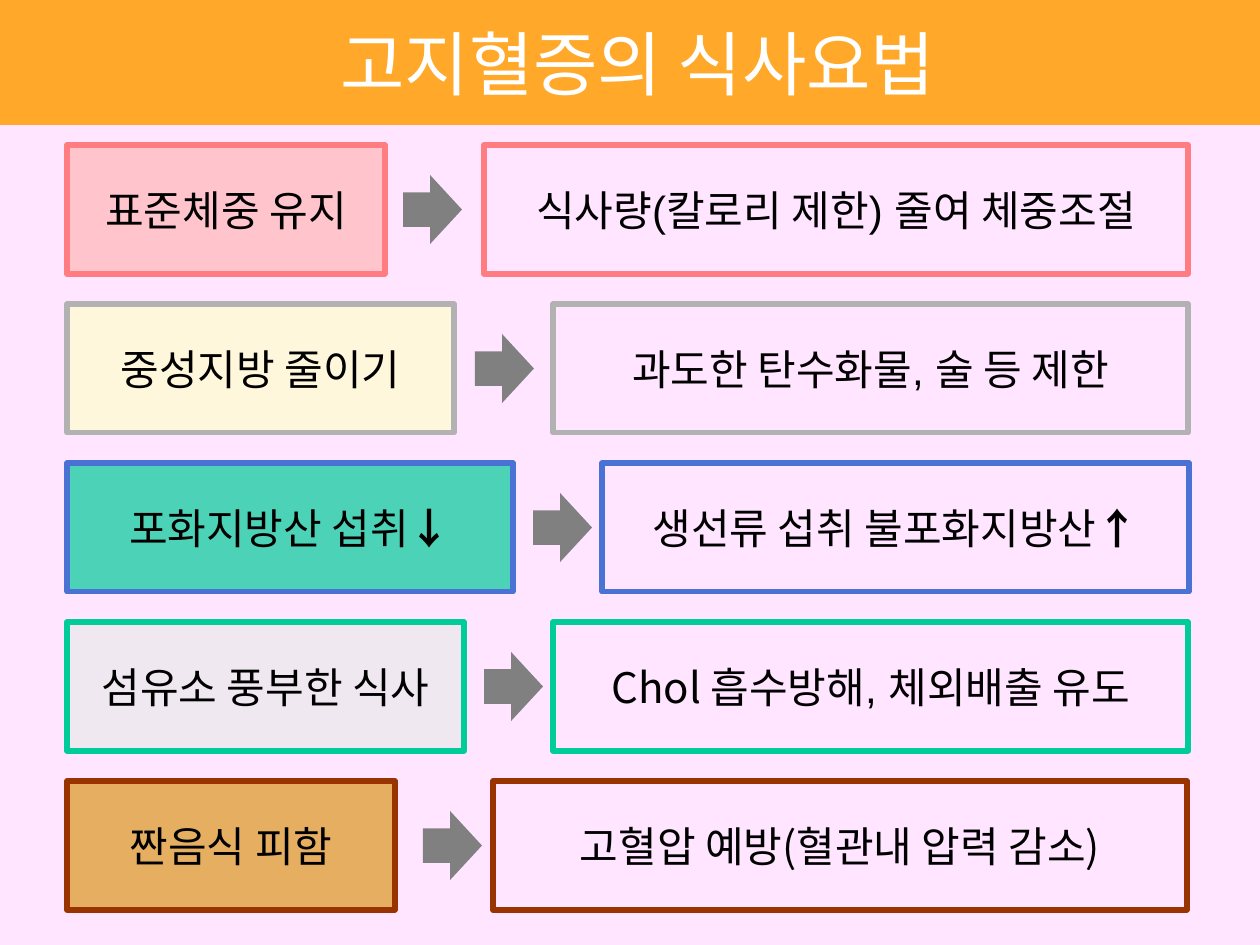
from lxml import etree
from pptx import Presentation
from pptx.dml.color import RGBColor
from pptx.enum.shapes import MSO_SHAPE
from pptx.enum.text import MSO_ANCHOR, PP_ALIGN
from pptx.oxml.ns import qn
from pptx.util import Emu, Pt

RECT = MSO_SHAPE.RECTANGLE
ARROW = MSO_SHAPE.DOWN_ARROW
MIDDLE = MSO_ANCHOR.MIDDLE
CENTER = PP_ALIGN.CENTER

ARIAL = "Arial"
NOTO = "Noto Sans CJK KR"

BLACK = RGBColor(0x00, 0x00, 0x00)
WHITE = RGBColor(0xFF, 0xFF, 0xFF)
GREY = RGBColor(0x80, 0x80, 0x80)
LILAC = RGBColor(0xFF, 0xE5, 0xFF)
ORANGE = RGBColor(0xFF, 0xA8, 0x29)
ROSE = RGBColor(0xFF, 0x7C, 0x80)
PINK = RGBColor(0xFF, 0xB7, 0xB7)
SILVER = RGBColor(0xB2, 0xB2, 0xB2)
CREAM = RGBColor(0xFF, 0xFF, 0xCC)
BLUE = RGBColor(0x4A, 0x71, 0xD4)
GREEN = RGBColor(0x00, 0xCC, 0x99)
PALE = RGBColor(0xEA, 0xEA, 0xEA)
BROWN = RGBColor(0x99, 0x33, 0x00)
OCHRE = RGBColor(0xDA, 0x97, 0x1E)

SCALE = 914400 / 126
WIDTH, HEIGHT = 1260, 945
LEFT, TOP, PITCH, TALL = 67, 145, 159, 129

ROWS = [
    (ROSE, PINK, 318, 398, 484, 704,
     [("표준체중 유지", ARIAL, False)],
     [("식사량(칼로리 제한) 줄여 체중조절", ARIAL, False)]),
    (SILVER, CREAM, 387, 470, 553, 635,
     [("중성지방 줄이기", ARIAL, False)],
     [("과도한 탄수화물, 술 등 제한", ARIAL, False)]),
    (BLUE, GREEN, 446, 528, 602, 587,
     [("포화지방산 섭취", ARIAL, False), ("↓", ARIAL, True)],
     [("생선류 섭취 불포화지방산", ARIAL, False), ("↑", ARIAL, True)]),
    (GREEN, PALE, 397, 479, 553, 635,
     [("섬유소 풍부한 식사", NOTO, False)],
     [("Chol ", NOTO, False), ("흡수방해, 체외배출 유도", ARIAL, False)]),
    (BROWN, OCHRE, 328, 418, 493, 694,
     [("짠음식 피함", ARIAL, False)],
     [("고혈압 예방(혈관내 압력 감소)", NOTO, False)]),
]


def px(*sizes):
    return [Emu(round(size * SCALE)) for size in sizes]


class Board:
    def __init__(self, deck):
        self.size = 24
        self.slide = deck.slides.add_slide(deck.slide_layouts[5])
        back = self.slide.background.fill
        back.solid()
        back.fore_color.rgb = LILAC

    def label(self, shape, runs, size, color):
        frame = shape.text_frame
        frame.word_wrap = False
        frame.vertical_anchor = MIDDLE
        para = frame.paragraphs[0]
        para.alignment = CENTER
        for text, name, bold in runs:
            run = para.add_run()
            run.text = text
            font = run.font
            font.size = Pt(size)
            font.bold = bold
            font.color.rgb = color
            font.name = name
            east = etree.SubElement(run._r.get_or_add_rPr(), qn("a:ea"))
            east.set("typeface", NOTO)

    def title(self, text, high):
        shape = self.slide.shapes.title
        shape.left, shape.top, shape.width, shape.height = px(0, 0, WIDTH, high)
        shape.fill.solid()
        shape.fill.fore_color.rgb = ORANGE
        self.label(shape, [(text, NOTO, False)], 40, WHITE)

    def box(self, left, top, width, runs, edge, fill=None):
        shape = self.slide.shapes.add_shape(RECT, *px(left, top, width, TALL))
        shape.shadow.inherit = False
        shape.line.color.rgb = edge
        shape.line.width = Pt(3)
        if fill is None:
            shape.fill.background()
        else:
            shape.fill.solid()
            shape.fill.fore_color.rgb = fill
            tint = shape._element.spPr.find(qn("a:solidFill"))[0]
            etree.SubElement(tint, qn("a:alpha")).set("val", "70000")
        self.label(shape, runs, self.size, BLACK)

    def arrow(self, left, top):
        shape = self.slide.shapes.add_shape(ARROW, *px(left, top, 69, 59))
        shape.shadow.inherit = False
        shape.rotation = 270
        shape.adjustments[0] = 0.5
        shape.adjustments[1] = 0.54
        shape.fill.solid()
        shape.fill.fore_color.rgb = GREY
        shape.line.fill.background()


def main():
    deck = Presentation()
    deck.slide_width, deck.slide_height = px(WIDTH, HEIGHT)
    board = Board(deck)
    board.title(" 고지혈증의 식사요법", 125)
    for i, (edge, fill, wide, tip, start, span, goal, means) in enumerate(ROWS):
        top = TOP + i * PITCH
        board.box(LEFT, top, wide, goal, edge, fill)
        board.arrow(tip, top + 35)
        board.box(start, top, span, means, edge)
    deck.save("out.pptx")


if __name__ == "__main__":
    main()
